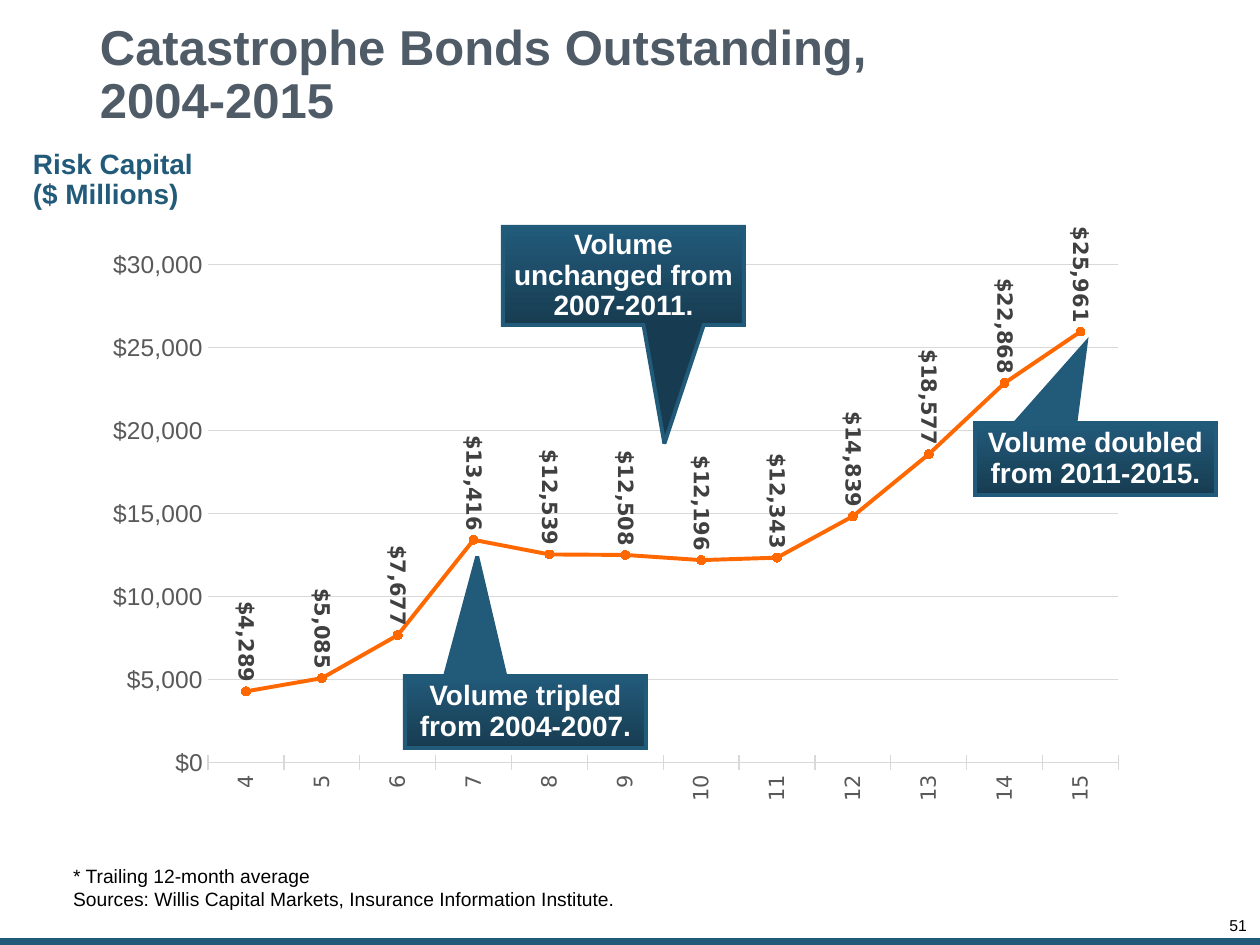
from dataclasses import dataclass

from lxml import etree
from pptx import Presentation
from pptx.chart.data import CategoryChartData
from pptx.dml.color import RGBColor
from pptx.enum.chart import XL_CHART_TYPE, XL_LABEL_POSITION, XL_MARKER_STYLE, XL_TICK_MARK
from pptx.enum.shapes import MSO_SHAPE
from pptx.enum.text import MSO_ANCHOR, PP_ALIGN
from pptx.util import Pt

LINE_CHART = XL_CHART_TYPE.LINE_MARKERS
LABEL_ABOVE = XL_LABEL_POSITION.ABOVE
CIRCLE = XL_MARKER_STYLE.CIRCLE
TICK_CROSS, TICK_NONE = XL_TICK_MARK.CROSS, XL_TICK_MARK.NONE
RECTANGLE, CALLOUT = MSO_SHAPE.RECTANGLE, MSO_SHAPE.RECTANGULAR_CALLOUT
TOP, MIDDLE = MSO_ANCHOR.TOP, MSO_ANCHOR.MIDDLE
LEFT, CENTER, RIGHT = PP_ALIGN.LEFT, PP_ALIGN.CENTER, PP_ALIGN.RIGHT


@dataclass(frozen=True)
class Theme:
    font: str = "Arial"
    chart_font: str = "DejaVu Sans"
    title: str = "4F5B66"
    accent: str = "225A7A"
    accent_dark: str = "173C51"
    series: str = "FF6801"
    grid: str = "D9D9D9"
    axis_text: str = "595959"
    label_text: str = "404040"
    black: str = "000000"
    white: str = "FFFFFF"
    title_size: int = 28
    heading_size: int = 16
    value_size: int = 14
    category_size: int = 12
    note_size: int = 11
    number_size: int = 9
    thin: float = 0.75
    thick: float = 2.25


THEME = Theme()
SLIDE = (1260, 945)
BAR = (0, 938, 1260, 7)

# text lines, box, size, colour, bold, line spacing, alignment, anchor, insets (x, y)
TEXTS = [
    (["Catastrophe Bonds Outstanding,\v2004-2015"], (94, 17, 846, 118),
     THEME.title_size, THEME.title, True, 0.9, LEFT, MIDDLE, (6, 6)),
    (["Risk Capital ($ Millions)"], (33, 150, 179, 60),
     THEME.heading_size, THEME.accent, True, 0.9, LEFT, TOP, (0, 0)),
    (["* Trailing 12-month average",
      "Sources: Willis Capital Markets, Insurance Information Institute."],
     (60, 858, 1139, 59), THEME.note_size, THEME.black, False, 1.0, LEFT, TOP, (13, 6)),
    (["51"], (1186, 919, 61, 16),
     THEME.number_size, THEME.black, False, 0.85, RIGHT, TOP, (0, 0)),
]

# text, box, pointer offset from the centre as a share of the box
CALLOUTS = [
    ("Volume doubled from 2011-2015.", (975, 423, 241, 72), (-0.04, -1.61)),
    ("Volume tripled from 2004-2007.", (405, 676, 241, 72), (-0.2, -2.16)),
    ("Volume unchanged from 2007-2011.", (503, 227, 241, 98), (0.17, 1.71)),
]
CALLOUT_INSETS = (10, 10)

CHART_BOX = (62, 227, 1124, 669)
PLOT_AREA = {"x": 0.13, "y": 0.04, "w": 0.81, "h": 0.76}
FIRST_YEAR = 4
VOLUMES = [4289, 5085, 7677, 13416, 12539, 12508,
           12196, 12343, 14839, 18577, 22868, 25961]
DOLLARS = '"$"#,##0'
AXIS_MAX, AXIS_STEP = 30500, 5000


def px(length):
    return round(length * 914400 / 126)


def place(box):
    return [px(length) for length in box]


def rgb(colour):
    return RGBColor.from_string(colour)


def style_font(font, size, colour, name=THEME.font, bold=False):
    font.size, font.name, font.bold = Pt(size), name, bold
    font.color.rgb = rgb(colour)


def style_line(line, colour, width):
    line.color.rgb = rgb(colour)
    line.width = Pt(width)


def write(frame, lines, size, colour, bold, spacing, align, anchor, insets):
    frame.word_wrap = True
    frame.vertical_anchor = anchor
    frame.margin_left = frame.margin_right = px(insets[0])
    frame.margin_top = frame.margin_bottom = px(insets[1])
    for index, line in enumerate(lines):
        para = frame.add_paragraph() if index else frame.paragraphs[0]
        para.alignment, para.line_spacing = align, spacing
        for part_index, part in enumerate(line.split("\v")):
            if part_index:
                para.add_line_break()
            span = para.add_run()
            span.text = part
            style_font(span.font, size, colour, bold=bold)


def add_bar(page):
    bar = page.shapes.add_shape(RECTANGLE, *place(BAR))
    bar.shadow.inherit = False
    bar.fill.solid()
    bar.fill.fore_color.rgb = rgb(THEME.accent)
    bar.line.fill.background()


def sharpen_corners(shape):
    outline = shape._element.spPr.find("{*}ln")
    namespace = etree.QName(outline).namespace
    etree.SubElement(outline, f"{{{namespace}}}miter", lim="800000")


def add_callout(page, text, box, pointer):
    callout = page.shapes.add_shape(CALLOUT, *place(box))
    callout.shadow.inherit = False
    for index, offset in enumerate(pointer):
        callout.adjustments[index] = offset
    callout.fill.gradient()
    callout.fill.gradient_angle = 270
    for stop, colour in zip(callout.fill.gradient_stops, (THEME.accent, THEME.accent_dark)):
        stop.color.rgb = rgb(colour)
    style_line(callout.line, THEME.accent, THEME.thick)
    sharpen_corners(callout)
    write(callout.text_frame, [text], THEME.heading_size, THEME.white, True,
          0.9, CENTER, MIDDLE, CALLOUT_INSETS)


def rotate_text(properties, degrees):
    body = properties.find("{*}bodyPr")
    body.set("rot", str(degrees * 60000))
    body.set("vert", "horz")


def fix_plot_area(chart):
    """Pin the inner plot area to fixed shares of the chart."""
    plot_area = chart.plots[0]._element.getparent()
    namespace = etree.QName(plot_area).namespace
    for old in plot_area.findall("{*}layout"):
        plot_area.remove(old)
    layout = etree.Element(f"{{{namespace}}}layout")
    manual = etree.SubElement(layout, f"{{{namespace}}}manualLayout")
    settings = {"layoutTarget": "inner", "xMode": "edge", "yMode": "edge", **PLOT_AREA}
    for tag, value in settings.items():
        etree.SubElement(manual, f"{{{namespace}}}{tag}", val=str(value))
    plot_area.insert(0, layout)


def add_volume_chart(page):
    data = CategoryChartData(number_format=DOLLARS)
    data.categories = [str(FIRST_YEAR + index) for index in range(len(VOLUMES))]
    data.add_series("Series 1", VOLUMES)
    chart = page.shapes.add_chart(LINE_CHART, *place(CHART_BOX), data).chart
    chart.has_legend = chart.has_title = False
    style_font(chart.font, 10, THEME.black, THEME.chart_font)
    fix_plot_area(chart)

    years = chart.category_axis
    years.major_tick_mark, years.minor_tick_mark = TICK_CROSS, TICK_NONE
    style_line(years.format.line, THEME.grid, THEME.thin)
    style_font(years.tick_labels.font, THEME.category_size, THEME.axis_text, THEME.chart_font)
    rotate_text(years._element.find("{*}txPr"), -90)

    dollars = chart.value_axis
    dollars.minimum_scale, dollars.maximum_scale = 0, AXIS_MAX
    dollars.major_unit = AXIS_STEP
    dollars.major_tick_mark = dollars.minor_tick_mark = TICK_NONE
    dollars.format.line.fill.background()
    style_line(dollars.major_gridlines.format.line, THEME.grid, THEME.thin)
    dollars.tick_labels.number_format = DOLLARS
    dollars.tick_labels.number_format_is_linked = False
    style_font(dollars.tick_labels.font, THEME.value_size, THEME.axis_text)

    chart.plots[0].vary_by_categories = False
    volume = chart.plots[0].series[0]
    volume.smooth = False
    style_line(volume.format.line, THEME.series, THEME.thick)
    volume.marker.style, volume.marker.size = CIRCLE, 5
    volume.marker.format.fill.solid()
    volume.marker.format.fill.fore_color.rgb = rgb(THEME.series)
    style_line(volume.marker.format.line, THEME.series, THEME.thin)

    labels = volume.data_labels
    labels.show_value, labels.position = True, LABEL_ABOVE
    labels.number_format, labels.number_format_is_linked = DOLLARS, False
    style_font(labels.font, THEME.category_size, THEME.label_text, THEME.chart_font, True)
    rotate_text(labels._element.find("{*}txPr"), 90)


def main():
    deck = Presentation()
    deck.slide_width, deck.slide_height = place(SLIDE)
    page = deck.slides.add_slide(deck.slide_layouts[6])
    add_bar(page)
    add_volume_chart(page)
    for lines, box, *style in TEXTS:
        write(page.shapes.add_textbox(*place(box)).text_frame, lines, *style)
    for callout in CALLOUTS:
        add_callout(page, *callout)
    deck.save("out.pptx")


if __name__ == "__main__":
    main()
